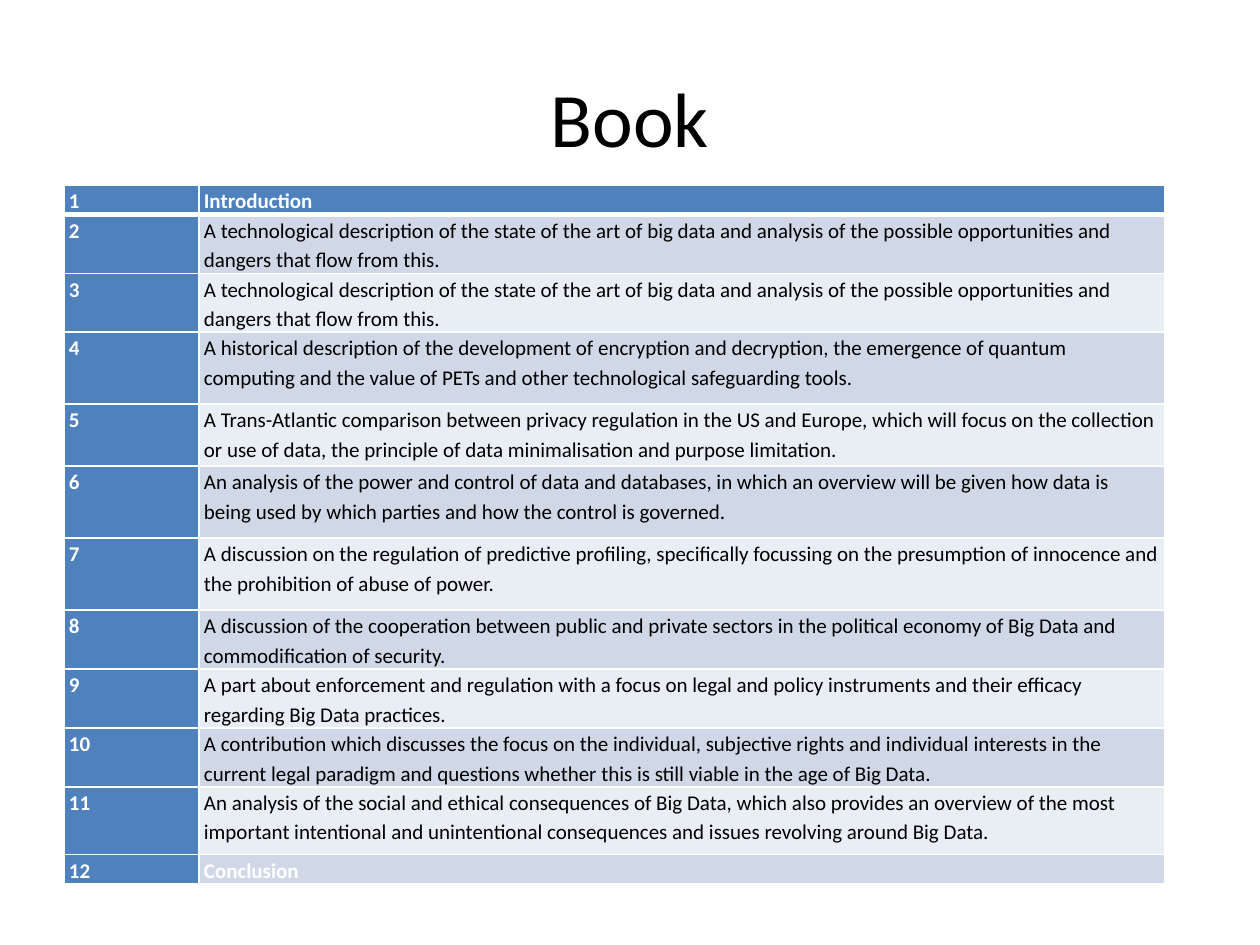
from lxml import etree
from pptx import Presentation
from pptx.dml.color import RGBColor
from pptx.enum.text import MSO_ANCHOR as Anchor, PP_ALIGN as Align
from pptx.oxml.ns import qn
from pptx.util import Pt

EMU_PER_PX = 914400 // 126
FONT = "Calibri"
BLACK = RGBColor(0x00, 0x00, 0x00)
WHITE = RGBColor(0xFF, 0xFF, 0xFF)
BLUE = RGBColor(0x4F, 0x81, 0xBD)
BANDS = (RGBColor(0xE9, 0xED, 0xF4), RGBColor(0xD0, 0xD8, 0xE8))

COLUMN_WIDTHS = (135, 966)
# Row height and chapter description
CHAPTERS = (
    (18, "Introduction"),
    (54, "A technological description of the state of the art of big data and analysis of "
         "the possible opportunities and dangers that flow from this."),
    (54, "A technological description of the state of the art of big data and analysis of "
         "the possible opportunities and dangers that flow from this."),
    (72, "A historical description of the development of encryption and decryption, the "
         "emergence of quantum computing and the value of PETs and other technological "
         "safeguarding tools."),
    (62, "A Trans-Atlantic comparison between privacy regulation in the US and Europe, which "
         "will focus on the collection or use of data, the principle of data minimalisation "
         "and purpose limitation."),
    (72, "An analysis of the power and control of data and databases, in which an overview "
         "will be given how data is being used by which parties and how the control is "
         "governed."),
    (72, "A discussion on the regulation of predictive profiling, specifically focussing on "
         "the presumption of innocence and the prohibition of abuse of power."),
    (54, "A discussion of the cooperation between public and private sectors in the political "
         "economy of Big Data and commodification of security."),
    (54, "A part about enforcement and regulation with a focus on legal and policy "
         "instruments and their efficacy regarding Big Data practices."),
    (58, "A contribution which discusses the focus on the individual, subjective rights and "
         "individual interests in the current legal paradigm and questions whether this is "
         "still viable in the age of Big Data."),
    (68, "An analysis of the social and ethical consequences of Big Data, which also provides "
         "an overview of the most important intentional and unintentional consequences and "
         "issues revolving around Big Data."),
    (18, "Conclusion"),
)


def px(length):
    return length * EMU_PER_PX


class SlideBuilder:
    def __init__(self, slide):
        self.slide = slide

    def format_text(self, text_frame, size, color, bold=False):
        for paragraph in text_frame.paragraphs:
            for run in paragraph.runs:
                run.font.name = FONT
                run.font.size = Pt(size)
                run.font.bold = bold
                run.font.color.rgb = color

    def title(self, text, left, top, width, height):
        shape = self.slide.shapes.title
        shape.left, shape.top = px(left), px(top)
        shape.width, shape.height = px(width), px(height)
        text_frame = shape.text_frame
        text_frame.text = text
        text_frame.vertical_anchor = Anchor.MIDDLE
        text_frame.paragraphs[0].alignment = Align.CENTER
        self.format_text(text_frame, 44, BLACK)

    def borders(self, cell, top=1, bottom=1):
        properties = cell._tc.get_or_add_tcPr()
        for side, width in (("L", 1), ("R", 1), ("T", top), ("B", bottom)):
            line = etree.SubElement(properties, qn(f"a:ln{side}"), w=str(Pt(width)))
            fill = etree.SubElement(line, qn("a:solidFill"))
            etree.SubElement(fill, qn("a:srgbClr"), val=str(WHITE))

    def cell(self, cell, text, fill, color, bold, top, bottom):
        self.borders(cell, top, bottom)
        cell.fill.solid()
        cell.fill.fore_color.rgb = fill
        cell.margin_left = cell.margin_right = px(5)
        cell.margin_top = cell.margin_bottom = 0
        cell.text_frame.text = text
        cell.text_frame.paragraphs[0].line_spacing = 1.15
        self.format_text(cell.text_frame, 12, color, bold)

    def chapter_table(self, chapters, left, top, height):
        frame = self.slide.shapes.add_table(
            len(chapters), len(COLUMN_WIDTHS),
            px(left), px(top), px(sum(COLUMN_WIDTHS)), px(height))
        table = frame.table
        for column, width in zip(table.columns, COLUMN_WIDTHS):
            column.width = px(width)
        last = len(chapters) - 1
        for index, (row_height, text) in enumerate(chapters):
            table.rows[index].height = px(row_height)
            # The header and the number column are blue; the rest is banded
            heading = index in (0, last)
            edges = (3 if index == 1 else 1, 3 if index == 0 else 1)
            self.cell(table.cell(index, 0), str(index + 1), BLUE, WHITE, True, *edges)
            self.cell(table.cell(index, 1), text,
                      BLUE if index == 0 else BANDS[index % 2],
                      WHITE if heading else BLACK, heading, *edges)
        frame.height = px(height)


def main():
    presentation = Presentation()
    presentation.slide_width, presentation.slide_height = px(1260), px(945)
    slide = presentation.slides.add_slide(presentation.slide_layouts[5])
    builder = SlideBuilder(slide)
    builder.title("Book", 63, 38, 1134, 158)
    builder.chapter_table(CHAPTERS, 64, 185, 689)
    presentation.save("out.pptx")


if __name__ == "__main__":
    main()
